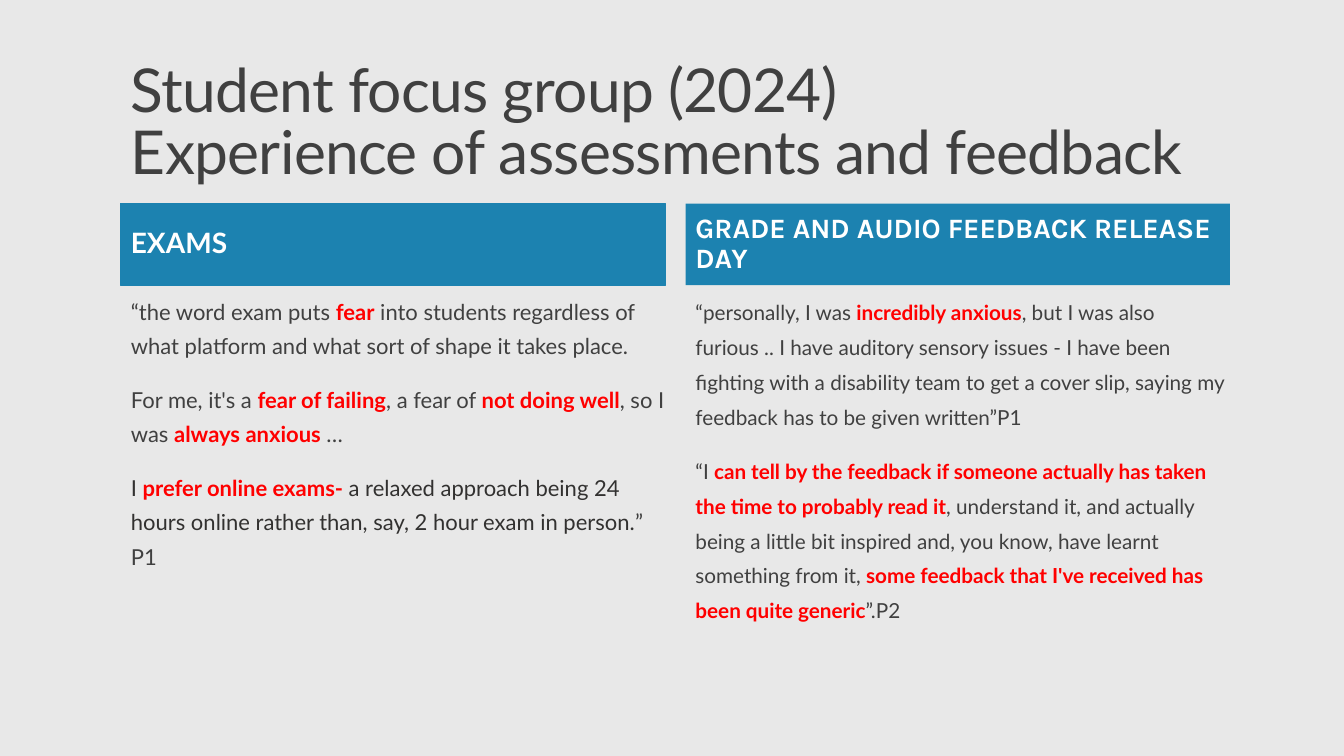
import pptx
import pptx.dml.color
import pptx.enum.shapes
import pptx.enum.text
import pptx.util
from pptx.util import Inches

GREY, RED, DARK, BLUE, WHITE = "404040", "FF0000", "323130", "1C82B0", "FFFFFF"
ANCHOR = pptx.enum.text.MSO_ANCHOR

EXAMS = [
    [("“the word exam puts ", GREY), ("fear", RED),
     (" into students regardless of what platform and what sort of shape it takes place.", GREY)],
    [("For me, it's a ", GREY), ("fear of failing", RED), (", a fear of ", GREY),
     ("not doing well", RED), (", so I was ", GREY), ("always anxious ", RED), ("…", GREY)],
    [("I ", DARK), ("prefer online exams- ", RED),
     ("a relaxed approach being 24 hours online rather than, say, 2 hour exam in person.", DARK),
     ("” P1", GREY)],
]
FEEDBACK = [
    [("“personally, I was ", GREY), ("incredibly anxious", RED),
     (", but I was also furious .. I have auditory sensory issues - I have been fighting with "
      "a disability team to get a cover slip, saying my feedback has to be given written”P1", GREY)],
    [("“I ", GREY),
     ("can tell by the feedback if someone actually has taken the time to probably read it", RED),
     (", understand it, and actually being a little bit inspired and, you know, "
      "have learnt something from it, ", GREY),
     ("some feedback that I've received has been quite generic", RED), ("”.P2", GREY)],
]


def rgb(color):
    """Return a colour from a hex string."""
    return pptx.dml.color.RGBColor.from_string(color)


def set_font(p, size, name="Lato", color=GREY, bold=False):
    """Set the font that all runs of a paragraph share."""
    p.font.size, p.font.name, p.font.bold = pptx.util.Pt(size), name, bold
    p.font.color.rgb = rgb(color)


def add_text_frame(s, x, y, w, h, anchor):
    """Add a wrapping text box and return its text frame."""
    tf = s.shapes.add_textbox(Inches(x), Inches(y), Inches(w), Inches(h)).text_frame
    tf.word_wrap, tf.vertical_anchor = True, anchor
    return tf


def add_title(s, x, y, w, h):
    """Add the two-line slide title."""
    p = add_text_frame(s, x, y, w, h, ANCHOR.BOTTOM).paragraphs[0]
    p.text = "Student focus group (2024)\vExperience of assessments and feedback"
    p.line_spacing = 0.85
    set_font(p, 43.2)
    p.font._element.set("spc", "-50")


def add_heading(s, x, y, w, h, text, font, outlined):
    """Add the blue heading bar of a column."""
    sp = s.shapes.add_shape(pptx.enum.shapes.MSO_SHAPE.RECTANGLE,
                            Inches(x), Inches(y), Inches(w), Inches(h))
    sp.shadow.inherit = False
    sp.fill.solid()
    sp.fill.fore_color.rgb = rgb(BLUE)
    if outlined:
        sp.line.color.rgb = rgb(BLUE)
        sp.line.width = pptx.util.Pt(0.75)
    else:
        sp.line.fill.background()
    sp.text_frame.vertical_anchor = ANCHOR.MIDDLE
    p = sp.text_frame.paragraphs[0]
    p.text = text
    p.alignment = pptx.enum.text.PP_ALIGN.LEFT
    p.line_spacing = 0.9
    set_font(p, 20, font, WHITE, True)


def add_quotes(s, x, y, w, h, quotes, size, spacing):
    """Add the quotes of a column, with key phrases in bold red."""
    tf = add_text_frame(s, x, y, w, h, ANCHOR.TOP)
    tf.margin_right = 0
    for i, quote in enumerate(quotes):
        p = tf.add_paragraph() if i else tf.paragraphs[0]
        p.line_spacing = spacing
        p.space_before = pptx.util.Pt(12 if i else 0)
        p.space_after = pptx.util.Pt(2)
        set_font(p, size)
        for text, color in quote:
            r = p.add_run()
            r.text = text
            r.font.color.rgb = rgb(color)
            r.font.bold = color == RED


def add_column(s, x, y, w, h, heading, font, outlined, quotes, size, spacing):
    """Add a heading bar with its quotes below."""
    bar = 0.81
    add_heading(s, x, y, w, bar, heading, font, outlined)
    add_quotes(s, x, y + bar, w, h - bar, quotes, size, spacing)


def main():
    """Build and save the slide."""
    prs = pptx.Presentation()
    prs.slide_width, prs.slide_height = Inches(13.33), Inches(7.5)
    s = prs.slides.add_slide(prs.slide_layouts[6])
    s.background.fill.solid()
    s.background.fill.fore_color.rgb = rgb("E8E8E8")
    add_title(s, 1.2, 0.31, 11, 1.59)
    columns = [
        ("EXAMS", "Lato", True, EXAMS, 15.7, 1.3),
        ("GRADE AND AUDIO FEEDBACK RELEASE DAY", "Karla", False, FEEDBACK, 14.8, 1.4),
    ]
    for i, column in enumerate(columns):
        add_column(s, 1.2 + 5.6 * i, 2.02, 5.4, 4.5, *column)
    prs.save("out.pptx")


if __name__ == "__main__":
    main()
